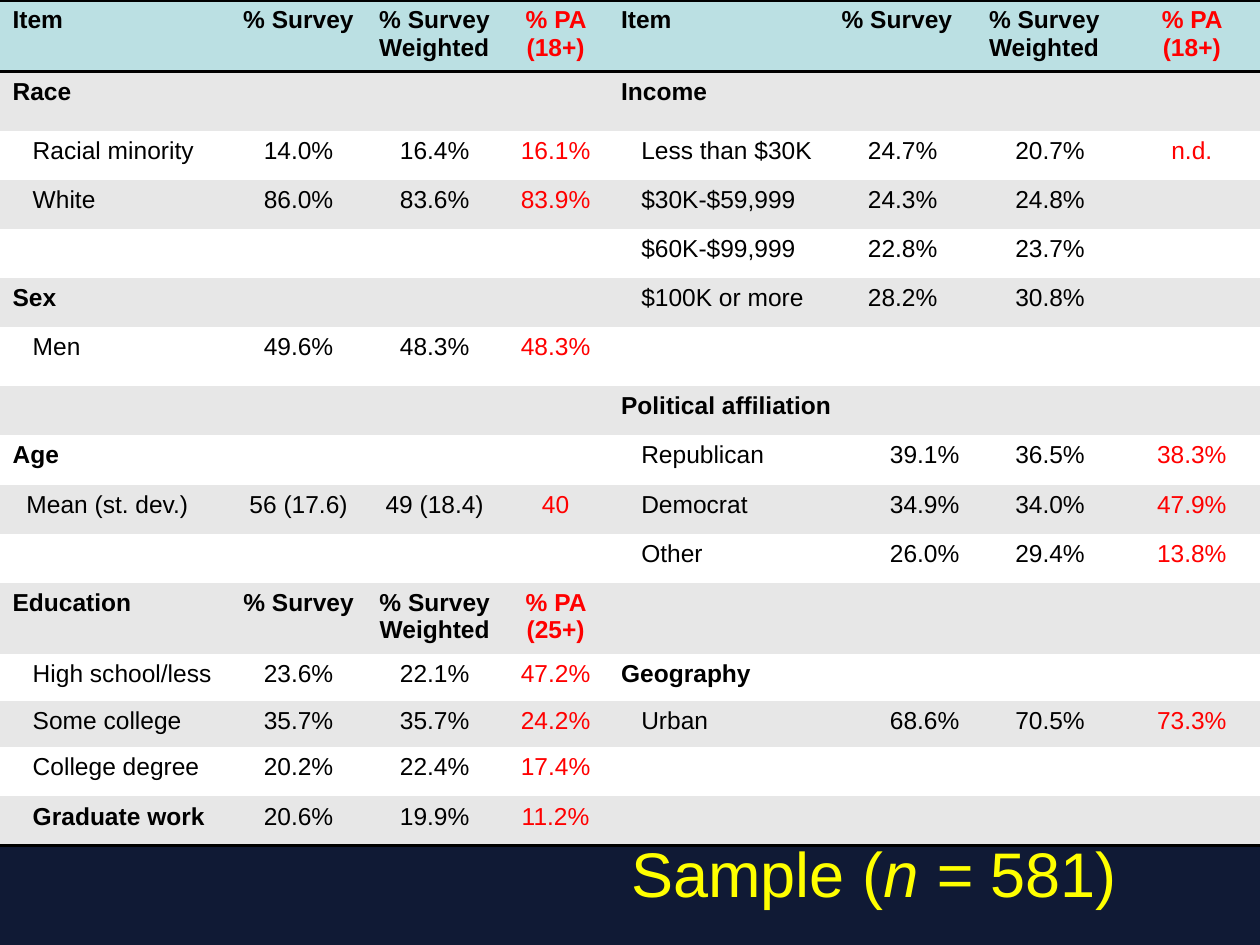
from dataclasses import dataclass

import pptx
import pptx.dml.color
import pptx.enum.shapes
import pptx.enum.text
import pptx.oxml.ns
import pptx.util
from lxml import etree

Inches = pptx.util.Inches
Pt = pptx.util.Pt
RGBColor = pptx.dml.color.RGBColor
PP_ALIGN = pptx.enum.text.PP_ALIGN
qn = pptx.oxml.ns.qn

BLACK = RGBColor(0x00, 0x00, 0x00)
WHITE = RGBColor(0xFF, 0xFF, 0xFF)
GRAY = RGBColor(0xE7, 0xE7, 0xE7)
AQUA = RGBColor(0xBB, 0xE0, 0xE3)
RED = RGBColor(0xFF, 0x00, 0x00)
NAVY = RGBColor(0x10, 0x1A, 0x35)
YELLOW = RGBColor(0xFF, 0xFF, 0x00)

PLAIN_STYLE = "{2D5ABB26-0587-4C30-8999-92F81FD0307C}"
COL_WIDTHS = [1.83, 1.08, 1.08, 0.84, 1.75, 0.35, 0.82, 1.17, 1.08]
ROW_HEIGHTS = [0.54, 0.47, *[0.39] * 4, 0.47, *[0.39] * 4, 0.54,
               0.37, 0.37, 0.39, 0.39]
POLITICS_ROW = 7


@dataclass
class Entry:
    label: str = ""
    values: tuple = ()
    bold: bool = False
    values_bold: bool = False
    indent: float = 0


def head(label: str, age: str) -> Entry:
    values = ("% Survey", "% Survey Weighted", f"% PA ({age})")
    return Entry(label, values, bold=True, values_bold=True)


def group(label: str) -> Entry:
    return Entry(label, bold=True)


def item(label: str, *values: str, indent: float = 0.16,
         bold: bool = False) -> Entry:
    return Entry(label, values, bold=bold, indent=indent)


LEFT = [
    head("Item", "18+"),
    group("Race"),
    item("Racial minority", "14.0%", "16.4%", "16.1%"),
    item("White", "86.0%", "83.6%", "83.9%"),
    Entry(),
    group("Sex"),
    item("Men", "49.6%", "48.3%", "48.3%"),
    Entry(),
    group("Age"),
    item("Mean (st. dev.)", "56 (17.6)", "49 (18.4)", "40", indent=0.11),
    Entry(),
    head("Education", "25+"),
    item("High school/less", "23.6%", "22.1%", "47.2%"),
    item("Some college", "35.7%", "35.7%", "24.2%"),
    item("College degree", "20.2%", "22.4%", "17.4%"),
    item("Graduate work", "20.6%", "19.9%", "11.2%", bold=True),
]
RIGHT = [
    head("Item", "18+"),
    group("Income"),
    item("Less than $30K", "24.7%", "20.7%", "n.d."),
    item("$30K-$59,999", "24.3%", "24.8%"),
    item("$60K-$99,999", "22.8%", "23.7%"),
    item("$100K or more", "28.2%", "30.8%"),
    Entry(),
    group("Political affiliation"),
    item("Republican", "39.1%", "36.5%", "38.3%"),
    item("Democrat", "34.9%", "34.0%", "47.9%"),
    item("Other", "26.0%", "29.4%", "13.8%"),
    Entry(),
    group("Geography"),
    item("Urban", "68.6%", "70.5%", "73.3%"),
    Entry(),
    Entry(),
]


def add_run(p, text: str, **formats):
    r = p.add_run()
    r.text = text
    color = formats.pop("color")
    for name, value in {"name": "Arial", **formats}.items():
        setattr(r.font, name, value)
    r.font.color.rgb = color


def add_border(cell, side: str):
    ln = etree.SubElement(cell._tc.get_or_add_tcPr(), qn(f"a:{side}"),
                          w=str(Pt(2)))
    fill = etree.SubElement(ln, qn("a:solidFill"))
    etree.SubElement(fill, qn("a:srgbClr"), val=str(BLACK))


def style_cell(cell, row: int):
    """Set the rules, row band and empty-line size of a cell."""
    last = len(ROW_HEIGHTS) - 1
    if row == 0:
        add_border(cell, "lnT")
    if row in (0, last):
        add_border(cell, "lnB")
    cell.fill.solid()
    cell.fill.fore_color.rgb = AQUA if row == 0 else GRAY if row % 2 else WHITE
    p = cell.text_frame.paragraphs[0]
    etree.SubElement(p._p, qn("a:endParaRPr"), sz="1400")


def write_entry(tbl, row: int, cols: tuple, entry: Entry):
    """Write a label and its values into the given columns of a row."""
    if entry.label:
        cell = tbl.cell(row, cols[0])
        cell.margin_left = Inches(0.1 + entry.indent)
        add_run(cell.text_frame.paragraphs[0], entry.label,
                size=Pt(14), bold=entry.bold, color=BLACK)
    for i, (col, value) in enumerate(zip(cols[1:], entry.values)):
        p = tbl.cell(row, col).text_frame.paragraphs[0]
        is_pa = i == 2
        p.alignment = (PP_ALIGN.LEFT if row == 0 and not is_pa
                       else PP_ALIGN.CENTER)
        add_run(p, value, size=Pt(14), bold=entry.values_bold,
                color=RED if is_pa else BLACK)


def add_sample_table(s):
    tbl = s.shapes.add_table(len(ROW_HEIGHTS), len(COL_WIDTHS), 0, 0,
                             Inches(10), Inches(sum(ROW_HEIGHTS))).table
    tbl.first_row = tbl.horz_banding = False
    tbl._tbl.tblPr.find(qn("a:tableStyleId")).text = PLAIN_STYLE
    for col, width in zip(tbl.columns, COL_WIDTHS):
        col.width = Inches(width)
    for row, height in enumerate(ROW_HEIGHTS):
        tbl.rows[row].height = Inches(height)
        for col in range(len(COL_WIDTHS)):
            style_cell(tbl.cell(row, col), row)
        # Income values span two columns; below, the labels do
        upper = row < POLITICS_ROW
        first = 5 if upper else 4
        end = 6 if row <= POLITICS_ROW else 5
        tbl.cell(row, first).merge(tbl.cell(row, end))
        write_entry(tbl, row, (0, 1, 2, 3), LEFT[row])
        write_entry(tbl, row, (4, 5 if upper else 6, 7, 8), RIGHT[row])


def add_footer_band(s):
    sp = s.shapes.add_shape(pptx.enum.shapes.MSO_SHAPE.RECTANGLE, 0,
                            Inches(6.33), Inches(10), Inches(1.17))
    sp.shadow.inherit = False
    sp.fill.solid()
    sp.fill.fore_color.rgb = NAVY
    sp.line.fill.background()


def add_title(s):
    tf = s.shapes.add_textbox(Inches(4.5), Inches(6.67), Inches(4.87),
                              Inches(0.5)).text_frame
    tf.word_wrap = True
    tf.vertical_anchor = pptx.enum.text.MSO_ANCHOR.MIDDLE
    p = tf.paragraphs[0]
    p.alignment = PP_ALIGN.CENTER
    for text, italic in (("Sample (", False), ("n =", True), (" 581)", False)):
        add_run(p, text, size=Pt(36), italic=italic, color=YELLOW)


def main():
    prs = pptx.Presentation()
    prs.slide_width, prs.slide_height = Inches(10), Inches(7.5)
    s = prs.slides.add_slide(prs.slide_layouts[6])
    # Footer band, then title and table over it
    add_footer_band(s)
    add_title(s)
    add_sample_table(s)
    prs.save("out.pptx")


if __name__ == "__main__":
    main()
